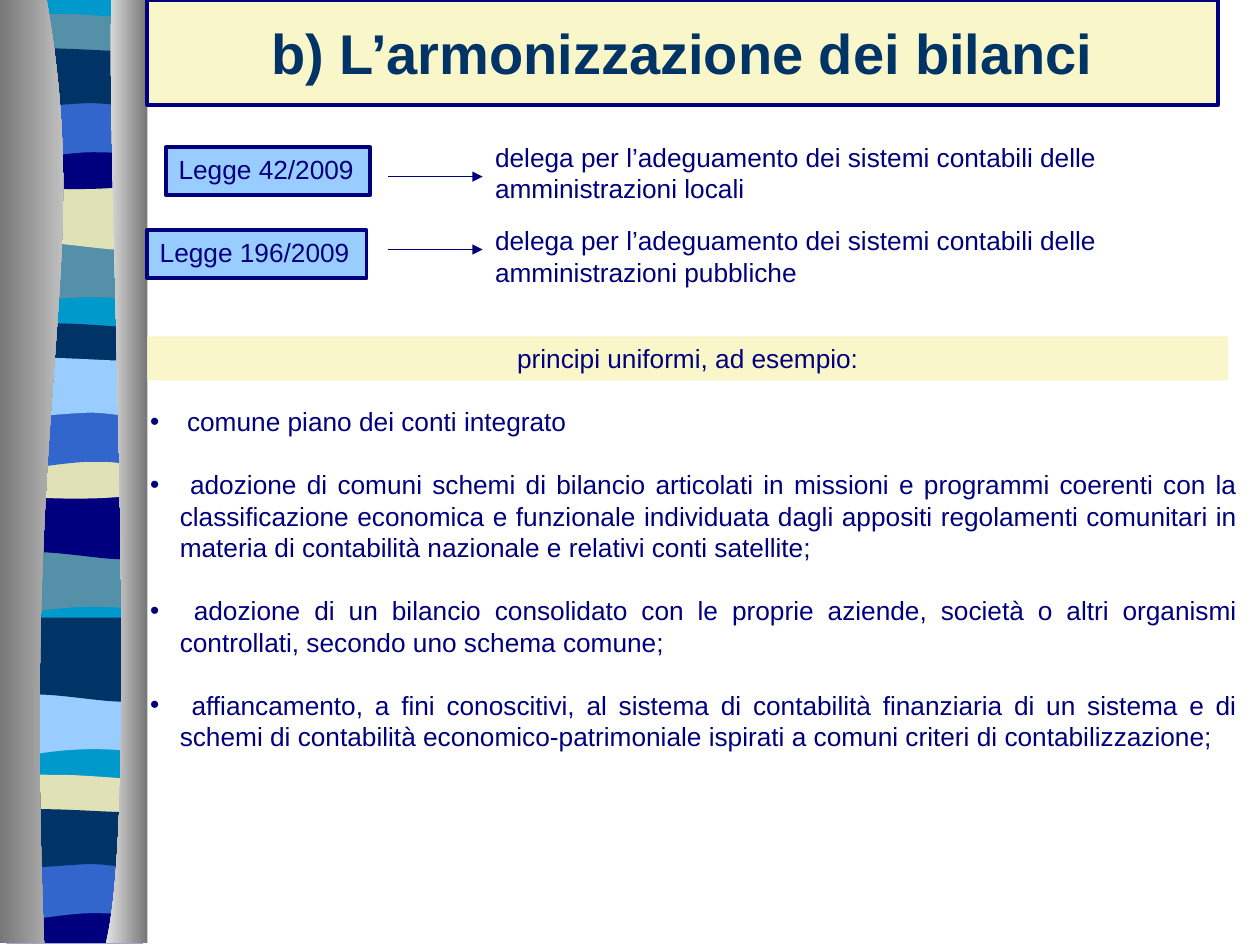
from lxml import etree
from pptx import Presentation
from pptx.dml.color import RGBColor
from pptx.enum.shapes import MSO_CONNECTOR, MSO_SHAPE
from pptx.enum.text import MSO_ANCHOR, MSO_AUTO_SIZE, PP_ALIGN
from pptx.oxml.ns import qn
from pptx.util import Cm, Pt

NAVY = RGBColor(0x00, 0x00, 0x7E)
DEEP = RGBColor(0x00, 0x33, 0x66)
BLUE = RGBColor(0x33, 0x66, 0xCC)
SKY = RGBColor(0x99, 0xCC, 0xFF)
TEAL = RGBColor(0x00, 0x99, 0xCC)
SLATE = RGBColor(0x54, 0x90, 0xA8)
SAND = RGBColor(0xE1, 0xE1, 0xB7)
CREAM = RGBColor(0xF9, 0xF7, 0xCA)
GREY = RGBColor(0x77, 0x77, 0x77)
PALE = RGBColor(0xE4, 0xE4, 0xE4)
FONT = "Arial"
LEFT, RIGHT = 0.13, 2.88

# Outlines in cm: a start point, then one point per line or three per curve.
BANDS = {
    "swoop": [(RIGHT, 4.56), [(RIGHT, 6.05)], [(0.99, 5.85), (0.61, 6.26), (LEFT, 6.05)], [(LEFT, 4.56)]],
    "swell": [(RIGHT, 3.34), [(RIGHT, 4.97)], [(2.44, 5.2), (0.99, 4.74), (LEFT, 4.94)], [(LEFT, 3.34)]],
    "crest": [(RIGHT, 0.38), [(RIGHT, 1.24)], [(2.44, 1.37), (0.61, 1.37), (LEFT, 1.24)], [(LEFT, 0.38)],
              [(0.3, 0.26), (0.74, 0.28), (1.19, 0.28)], [(1.65, 0.28), (2.54, 0.36), (RIGHT, 0.38)]],
    "bowl": [(RIGHT, 2.6), [(RIGHT, 3.7)], [(2.44, 3.85), (0.61, 3.85), (LEFT, 3.7)], [(LEFT, 2.6)],
             [(1.83, 2.73), (2.31, 2.6), (RIGHT, 2.6)]],
    "foot": [(RIGHT, 2.6), [(RIGHT, 3.68)], [(LEFT, 3.68)], [(LEFT, 2.6)],
             [(1.83, 2.73), (2.31, 2.6), (RIGHT, 2.6)]],
    "arch": [(RIGHT, 1.74), [(RIGHT, 3.23)], [(2.46, 3.07), (2.29, 3.07), (1.83, 3.07)],
             [(1.37, 3.07), (0.56, 3.23), (LEFT, 3.23)], [(LEFT, 1.74)]],
    "ripple": [(RIGHT, 1.03), [(RIGHT, 2.1)], [(2.72, 2.22), (2.29, 2.08), (1.83, 2.08)],
               [(1.37, 2.08), (0.43, 2.22), (LEFT, 2.1)], [(LEFT, 1.03)],
               [(0.53, 0.9), (2.01, 1.03), (2.46, 1.03)]],
}
REPEATS = [
    (0, {"swoop": SLATE, "swell": SAND, "crest": SLATE, "bowl": NAVY, "arch": BLUE, "ripple": DEEP}),
    (6.24, {"swoop": SLATE, "swell": NAVY, "crest": DEEP, "bowl": SAND, "arch": BLUE, "ripple": SKY}),
    (9.11, {"swoop": SKY, "swell": DEEP}),
    (15.34, {"crest": SAND, "foot": NAVY, "arch": BLUE, "ripple": DEEP}),
]
PILLARS = [
    ([(0.94, 0), [(1.9, 5.49), (0.43, 7.52), (0.89, 19.02)], [(0, 19.02)], [(0, 0)]], GREY, PALE),
    ([(2.25, 0), [(2.13, 3.18), (2.84, 16.41), (2.13, 19.02)], [(2.97, 19.02)], [(2.97, 0)]], PALE, GREY),
]
LAWS = [
    ("Legge 42/2009", 3.35, 2.97, 4.11, 3.56, 2.72, "locali"),
    ("Legge 196/2009", 2.97, 4.64, 4.42, 5.03, 4.4, "pubbliche"),
]
PRINCIPLES = [
    "comune piano dei conti integrato",
    "adozione di comuni schemi di bilancio articolati in missioni e programmi coerenti con la "
    "classificazione economica e funzionale individuata dagli appositi regolamenti comunitari in "
    "materia di contabilità nazionale e relativi conti satellite;",
    "adozione di un bilancio consolidato con le proprie aziende, società o altri organismi "
    "controllati, secondo uno schema comune;",
    "affiancamento, a fini conoscitivi, al sistema di contabilità finanziaria di un sistema e di "
    "schemi di contabilità economico-patrimoniale ispirati a comuni criteri di contabilizzazione;",
]


def draw_outline(shapes, outline, drop=0):
    """Draw a closed outline moved down by drop cm, joining point triples into curves."""
    start, *segments = outline
    points = [start] + [point for segment in segments for point in segment]
    points = [(x * 100, (y + drop) * 100) for x, y in points]
    builder = shapes.build_freeform(*points[0], scale=Cm(0.01))
    builder.add_line_segments(points[1:], close=True)
    shape = builder.convert_to_shape()
    lines = iter(list(shape.element.iter(qn("a:lnTo"))))
    for segment in segments:
        line = next(lines)
        if len(segment) == 3:
            line.addprevious(curve := etree.Element(qn("a:cubicBezTo")))
            for part in (line, next(lines), next(lines)):
                curve.append(part[0])
                part.getparent().remove(part)
    shape.shadow.inherit = False
    shape.line.fill.background()
    return shape


def write(para, text, align=PP_ALIGN.LEFT, size=15, color=NAVY, bold=False):
    para.alignment = align
    span = para.add_run()
    span.text = text
    span.font.name = FONT
    span.font.size = Pt(size)
    span.font.bold = bold
    span.font.color.rgb = color


deck = Presentation()
deck.slide_width, deck.slide_height = Cm(25.4), Cm(19.05)
page = deck.slides.add_slide(deck.slide_layouts[1])
title, body = page.placeholders

# Striped curtain between two shaded pillars
curtain = page.shapes.add_group_shape().shapes
backing = [(LEFT, 0), [(RIGHT, 0)], [(RIGHT, 18.97)], [(LEFT, 18.97)]]
bands = [(backing, 0, TEAL)]
bands += [(BANDS[name], drop, color) for drop, stripes in REPEATS for name, color in stripes.items()]
for outline, drop, color in bands:
    band = draw_outline(curtain, outline, drop)
    band.fill.solid()
    band.fill.fore_color.rgb = color
for outline, start, end in PILLARS:
    pillar = draw_outline(curtain, outline)
    pillar.fill.gradient()
    pillar.fill.gradient_angle = 0
    for stop, color in zip(pillar.fill.gradient_stops, (start, end)):
        stop.color.rgb = color

# Title, in front of the curtain
title.element.getparent().append(title.element)
title.left, title.top, title.width, title.height = Cm(2.97), Cm(0), Cm(21.59), Cm(2.11)
title.fill.solid()
title.fill.fore_color.rgb = CREAM
title.line.color.rgb = NAVY
title.line.width = Pt(2.25)
title.text_frame.vertical_anchor = MSO_ANCHOR.MIDDLE
write(title.text_frame.paragraphs[0], "b) L’armonizzazione dei bilanci", PP_ALIGN.CENTER, 32, DEEP, True)

# Each law points to what it delegates
for law, left, top, width, arrow_y, text_top, target in LAWS:
    box = page.shapes.add_shape(MSO_SHAPE.RECTANGLE, Cm(left), Cm(top), Cm(width), Cm(0.97))
    box.shadow.inherit = False
    box.fill.solid()
    box.fill.fore_color.rgb = SKY
    box.line.color.rgb = NAVY
    box.line.width = Pt(2.25)
    box.text_frame.word_wrap = False
    box.text_frame.vertical_anchor = MSO_ANCHOR.TOP
    write(box.text_frame.paragraphs[0], law)

    arrow = page.shapes.add_connector(MSO_CONNECTOR.STRAIGHT, Cm(7.82), Cm(arrow_y), Cm(9.73), Cm(arrow_y))
    arrow.line.color.rgb = NAVY
    arrow.line.width = Pt(0.75)
    etree.SubElement(arrow.line._get_or_add_ln(), qn("a:tailEnd"), type="triangle")
    etree.SubElement(arrow.element.spPr, qn("a:effectLst"))

    box = page.shapes.add_textbox(Cm(9.73), Cm(text_top), Cm(15.24), Cm(1.52))
    box.text_frame.word_wrap = True
    write(box.text_frame.paragraphs[0],
          f"delega per l’adeguamento dei sistemi contabili delle amministrazioni {target}")

# Heading strip and list of principles
strip = page.shapes.add_shape(MSO_SHAPE.RECTANGLE, Cm(2.97), Cm(6.78), Cm(21.79), Cm(0.89))
strip.shadow.inherit = False
strip.fill.solid()
strip.fill.fore_color.rgb = CREAM
strip.line.fill.background()
strip.text_frame.vertical_anchor = MSO_ANCHOR.TOP
write(strip.text_frame.paragraphs[0], "principi uniformi, ad esempio:", PP_ALIGN.CENTER)

body.element.getparent().append(body.element)
body.left, body.top, body.width, body.height = Cm(2.77), Cm(8.05), Cm(22.43), Cm(7.24)
frame = body.text_frame
frame.auto_size = MSO_AUTO_SIZE.NONE
for number, principle in enumerate(PRINCIPLES):
    para = frame.add_paragraph() if number else frame.paragraphs[0]
    para.space_before = Pt(18 if number else 0)
    write(para, f" {principle}", PP_ALIGN.JUSTIFY)
    props = para._p.get_or_add_pPr()
    props.set("marL", str(Cm(0.6)))
    props.set("indent", str(-Cm(0.6)))

deck.save("out.pptx")
